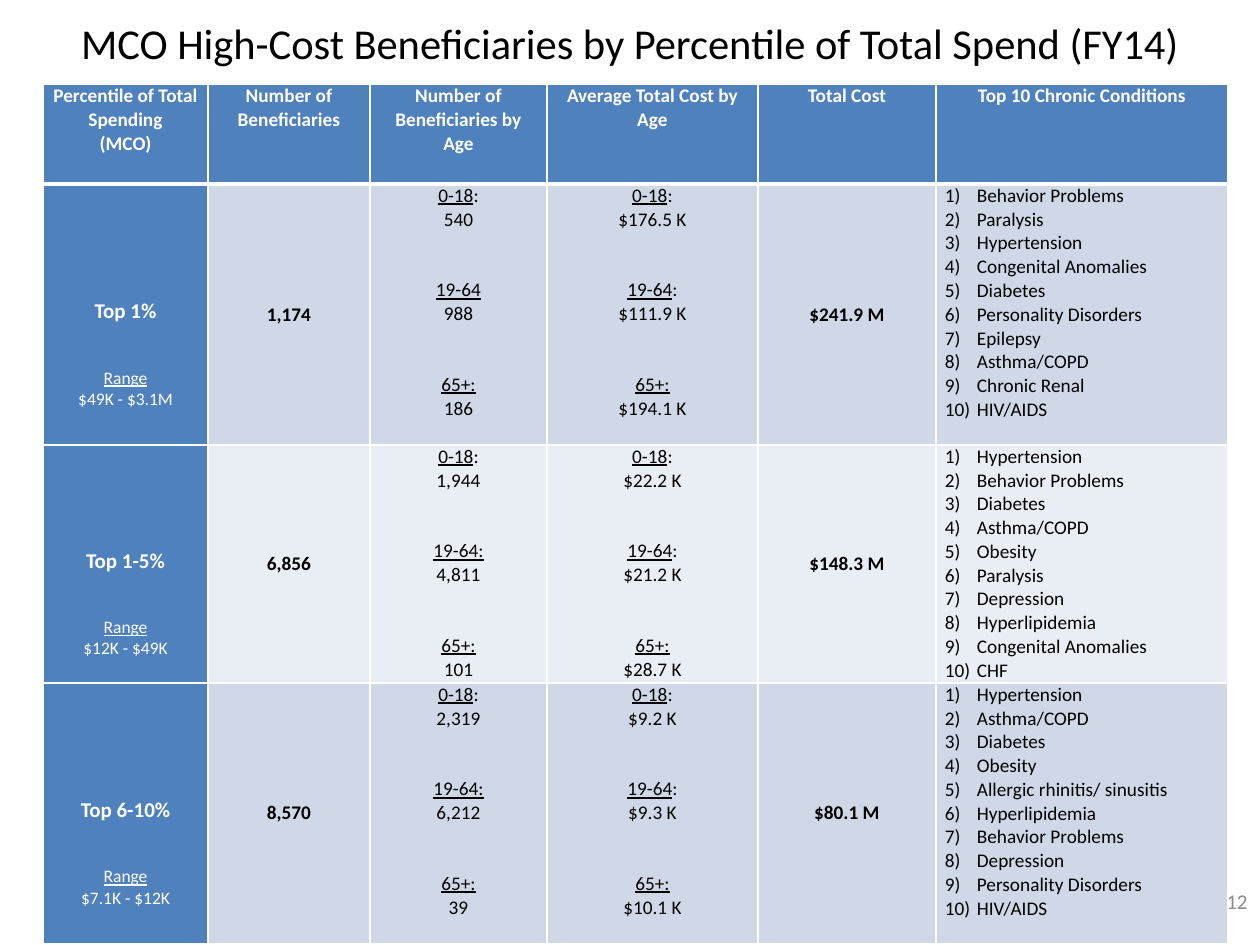
from typing import NamedTuple

from lxml import etree
from pptx import Presentation
from pptx.dml.color import RGBColor
from pptx.enum.text import MSO_ANCHOR, MSO_AUTO_SIZE, PP_ALIGN
from pptx.oxml.ns import qn
from pptx.util import Emu, Pt

TOP, MID = MSO_ANCHOR.TOP, MSO_ANCHOR.MIDDLE
LEFT, MIDST, RIGHT = PP_ALIGN.LEFT, PP_ALIGN.CENTER, PP_ALIGN.RIGHT
FIXED = MSO_AUTO_SIZE.NONE
FONT = "Calibri"
COLORS = {"black": "000000", "white": "FFFFFF", "grey": "8C8C8C",
          "blue": "4F81BD", "dark": "D0D8E8", "light": "E9EDF4"}
WIDTHS = [165, 162, 177, 211, 178, 292]
HEIGHTS = [100, 261, 238, 261]
HEADS = [["Percentile of Total Spending", "(MCO)"], ["Number of Beneficiaries"],
         ["Number of Beneficiaries by Age"], ["Average Total Cost by Age"],
         ["Total Cost"], ["Top 10 Chronic Conditions"]]


class Run(NamedTuple):
    text: str
    size: float = 11
    color: str = "black"
    bold: bool = False
    under: bool = False


class Para(NamedTuple):
    runs: list[Run]
    align: PP_ALIGN = MIDST
    gap: int = 0
    listed: bool = False


class Age(NamedTuple):
    label: str
    tail: str
    value: str


class Tier(NamedTuple):
    name: str
    span: str
    count: str
    people: list[Age]
    costs: list[Age]
    total: str
    ills: list[str]
    fill: str


TIERS = [
    Tier("Top 1%", "$49K - $3.1M", "1,174",
         [Age("0-18", ":", "540"), Age("19-64", "", "988"), Age("65+:", "", "186")],
         [Age("0-18", ":", "$176.5 K"), Age("19-64", ":", "$111.9 K"),
          Age("65+:", "", "$194.1 K")],
         "$241.9 M",
         ["Behavior Problems", "Paralysis", "Hypertension", "Congenital Anomalies",
          "Diabetes", "Personality Disorders", "Epilepsy", "Asthma/COPD",
          "Chronic Renal", "HIV/AIDS"], "dark"),
    Tier("Top 1-5%", "$12K - $49K", "6,856",
         [Age("0-18", ":", "1,944"), Age("19-64:", "", "4,811"), Age("65+:", "", "101")],
         [Age("0-18", ":", "$22.2 K"), Age("19-64", ":", "$21.2 K"),
          Age("65+:", "", "$28.7 K")],
         "$148.3 M",
         ["Hypertension", "Behavior Problems", "Diabetes", "Asthma/COPD", "Obesity",
          "Paralysis", "Depression", "Hyperlipidemia", "Congenital Anomalies",
          "CHF"], "light"),
    Tier("Top 6-10%", "$7.1K - $12K", "8,570",
         [Age("0-18", ":", "2,319"), Age("19-64:", "", "6,212"), Age("65+:", "", "39")],
         [Age("0-18", ":", "$9.2 K"), Age("19-64", ":", "$9.3 K"),
          Age("65+:", "", "$10.1 K")],
         "$80.1 M",
         ["Hypertension", "Asthma/COPD", "Diabetes", "Obesity",
          "Allergic rhinitis/ sinusitis", "Hyperlipidemia", "Behavior Problems",
          "Depression", "Personality Disorders", "HIV/AIDS"], "dark"),
]


def px(n: int) -> Emu:
    return Emu(round(n * 914400 / 126))


def write(frame, paras: list[Para]) -> None:
    frame.word_wrap = True
    for i, para in enumerate(paras):
        line = frame.paragraphs[0] if i == 0 else frame.add_paragraph()
        line.alignment = para.align
        line.space_before = px(para.gap)
        if para.listed:
            props = line._p.get_or_add_pPr()
            props.set("marL", str(px(32)))
            props.set("indent", str(-px(32)))
            etree.SubElement(props, qn("a:buAutoNum"), type="arabicParenR")
        for item in para.runs:
            run = line.add_run()
            run.text = item.text
            font = run.font
            font.name, font.size = FONT, Pt(item.size)
            font.bold, font.underline = item.bold, item.under
            font.color.rgb = RGBColor.from_string(COLORS[item.color])


def place(shape, left: int, top: int, width: int, height: int) -> None:
    shape.left, shape.top = px(left), px(top)
    shape.width, shape.height = px(width), px(height)


def edge(cell, side: str, points: float) -> None:
    line = etree.SubElement(cell._tc.get_or_add_tcPr(), qn(f"a:ln{side}"),
                            w=str(Pt(points)))
    fill = etree.SubElement(line, qn("a:solidFill"))
    etree.SubElement(fill, qn("a:srgbClr"), val=COLORS["white"])


def draw_cell(grid, row: int, col: int, paras: list[Para], fill: str,
              anchor: MSO_ANCHOR = TOP, drop: int = 0) -> None:
    cell = grid.cell(row, col)
    cell.margin_left = cell.margin_right = px(9)
    cell.margin_top, cell.margin_bottom = px(drop), 0
    cell.vertical_anchor = anchor
    for side in "LRTB":
        thick = (row, side) in ((0, "B"), (1, "T"))
        edge(cell, side, 3 if thick else 1)
    cell.fill.solid()
    cell.fill.fore_color.rgb = RGBColor.from_string(COLORS[fill])
    write(cell.text_frame, paras)


def age_list(ages: list[Age]) -> list[Para]:
    paras = []
    for i, age in enumerate(ages):
        runs = [Run(age.label, under=True)]
        if age.tail:
            runs.append(Run(age.tail))
        paras += [Para(runs, gap=47 if i else 0), Para([Run(age.value)])]
    return paras


def draw_tier(grid, row: int, tier: Tier) -> None:
    name = [Para([Run(tier.name, 12, "white", True)]),
            Para([Run("Range", 10, "white", under=True)], gap=43),
            Para([Run(tier.span, 10, "white")])]
    ills = [Para([Run(ill)], LEFT, listed=True) for ill in tier.ills]
    draw_cell(grid, row, 0, name, "blue", MID, 80)
    draw_cell(grid, row, 1, [Para([Run(tier.count, bold=True)])], tier.fill, MID)
    draw_cell(grid, row, 2, age_list(tier.people), tier.fill)
    draw_cell(grid, row, 3, age_list(tier.costs), tier.fill)
    draw_cell(grid, row, 4, [Para([Run(tier.total, bold=True)])], tier.fill, MID)
    draw_cell(grid, row, 5, ills, tier.fill)


def main() -> None:
    deck = Presentation()
    deck.slide_width, deck.slide_height = px(1260), px(945)
    slide = deck.slides.add_slide(deck.slide_layouts[5])

    title = slide.shapes.title
    place(title, 63, 10, 1134, 64)
    frame = title.text_frame
    frame.auto_size, frame.vertical_anchor = FIXED, MID
    frame.margin_left = frame.margin_right = 0
    write(frame, [Para([Run(
        "MCO High-Cost Beneficiaries by Percentile of Total Spend (FY14)", 24.3)])])

    page = slide.shapes.add_textbox(px(966), px(876), px(294), px(50))
    page.text_frame.vertical_anchor = MID
    write(page.text_frame, [Para([Run("12", 12, "grey")], RIGHT)])

    grid = slide.shapes.add_table(len(HEIGHTS), len(WIDTHS), px(43), px(84),
                                  px(sum(WIDTHS)), px(sum(HEIGHTS))).table
    for col, width in zip(grid.columns, WIDTHS):
        col.width = px(width)
    for row, height in zip(grid.rows, HEIGHTS):
        row.height = px(height)
    for col, lines in enumerate(HEADS):
        paras = [Para([Run(line, 11, "white", True)]) for line in lines]
        draw_cell(grid, 0, col, paras, "blue")
    for row, tier in enumerate(TIERS, 1):
        draw_tier(grid, row, tier)
    deck.save("out.pptx")


if __name__ == "__main__":
    main()
